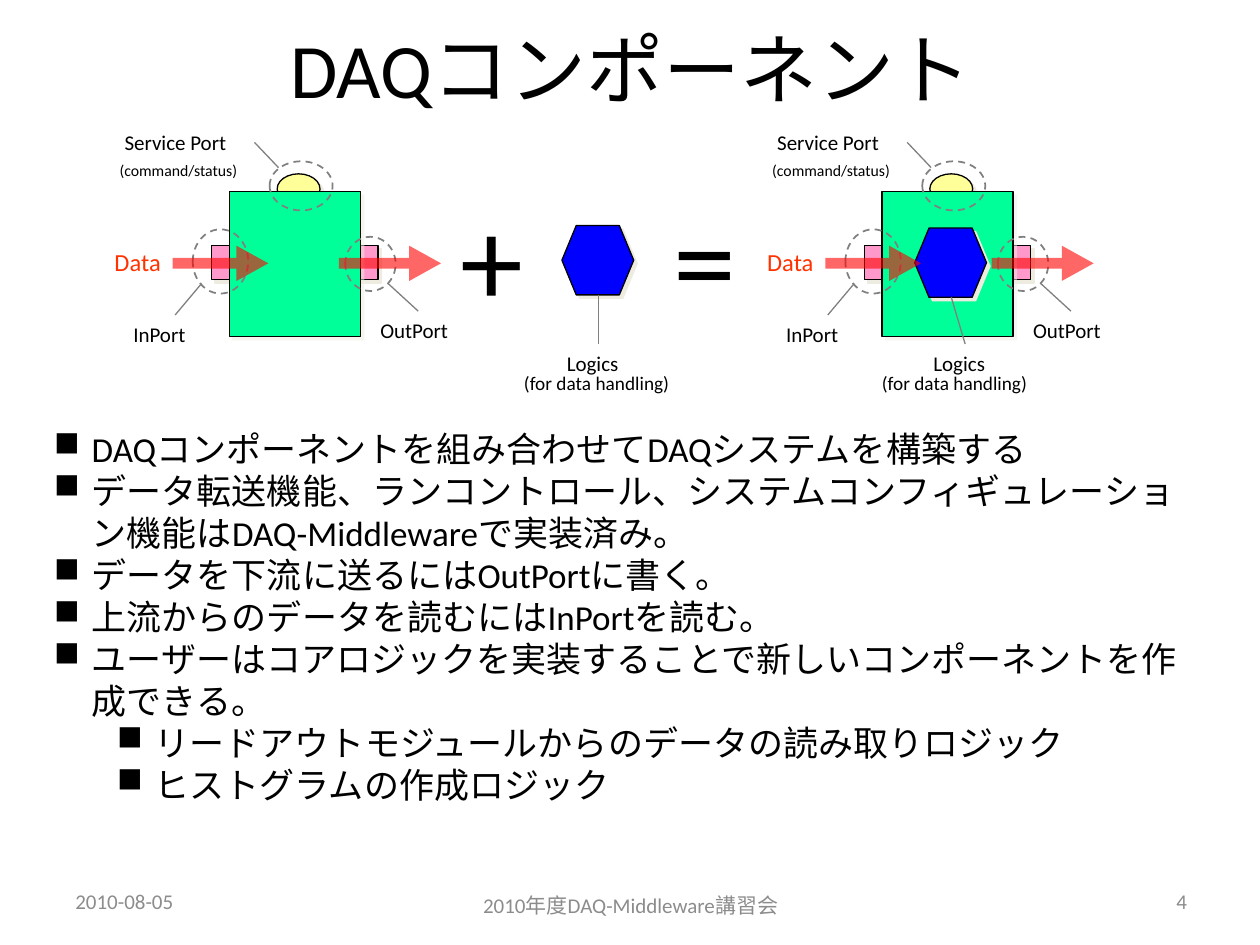
from lxml import etree
from pptx import Presentation
from pptx.dml.color import RGBColor
from pptx.enum.dml import MSO_LINE
from pptx.enum.shapes import MSO_CONNECTOR, MSO_SHAPE as Shape
from pptx.enum.text import MSO_ANCHOR as Anchor, MSO_AUTO_SIZE as AutoSize, PP_ALIGN as Align
from pptx.oxml.ns import qn
from pptx.util import Inches, Pt

FONT = "Calibri"
BLACK, GRAY, FOOTER = "000000", "808080", "8C8C8C"
PINK, YELLOW, GREEN, BLUE = "FF99CC", "FFFF99", "00FF99", "0000FF"
RED, ORANGE, SHADOW = "FF0000", "FF3300", "EEECE1"
BULLETS = [
    (0, "DAQコンポーネントを組み合わせてDAQシステムを構築する"),
    (0, "データ転送機能、ランコントロール、システムコンフィギュレーション機能はDAQ-Middlewareで実装済み。"),
    (0, "データを下流に送るにはOutPortに書く。"),
    (0, "上流からのデータを読むにはInPortを読む。"),
    (0, "ユーザーはコアロジックを実装することで新しいコンポーネントを作成できる。"),
    (1, "リードアウトモジュールからのデータの読み取りロジック"),
    (1, "ヒストグラムの作成ロジック"),
]


def rgb(color):
    return RGBColor.from_string(color)


def add_alpha(sp, percent):
    """Put an alpha value on the first colour found below the shape properties."""
    clr = next(sp._element.spPr.iter(qn("a:srgbClr")))
    etree.SubElement(clr, qn("a:alpha"), val=str(percent * 1000))


def add_shadow(sp, percent):
    effects = sp._element.spPr.find(qn("a:effectLst"))
    shadow = etree.SubElement(effects, qn("a:outerShdw"), dist=str(Pt(2.8)),
                              dir="2700000", algn="ctr", rotWithShape="0")
    clr = etree.SubElement(shadow, qn("a:srgbClr"), val=SHADOW)
    etree.SubElement(clr, qn("a:alpha"), val=str(percent * 1000))


def add_part(s, kind, x, y, w, h, fill=None, line=None, shadow=0):
    sp = s.shapes.add_shape(kind, Inches(x), Inches(y), Inches(w), Inches(h))
    sp.shadow.inherit = False
    if fill:
        sp.fill.solid()
        sp.fill.fore_color.rgb = rgb(fill)
    else:
        sp.fill.background()
    if line:
        sp.line.color.rgb = rgb(line)
        sp.line.width = Pt(0.75)
    else:
        sp.line.fill.background()
    if shadow:
        add_shadow(sp, shadow)
    return sp


def add_ring(s, x, y, w, h):
    sp = add_part(s, Shape.OVAL, x, y, w, h, line=GRAY)
    sp.line.width = Pt(1)
    sp.line.dash_style = MSO_LINE.DASH


def add_arrow(s, x, y, w):
    sp = add_part(s, Shape.RIGHT_ARROW, x, y, w, 0.28, RED)
    sp.adjustments[0], sp.adjustments[1] = 0.308, 0.902
    add_alpha(sp, 60)


def add_leader(s, x1, y1, x2, y2):
    line = s.shapes.add_connector(MSO_CONNECTOR.STRAIGHT, Inches(x1), Inches(y1),
                                  Inches(x2), Inches(y2))
    line.line.color.rgb = rgb(GRAY)
    line.line.width = Pt(0.75)
    etree.SubElement(line._element.spPr, qn("a:effectLst"))


def style(p, size, color):
    for r in p.runs:
        r.font.size = Pt(size)
        r.font.name = FONT
        r.font.color.rgb = rgb(color)


def add_text(s, text, x, y, w, h, size, color=BLACK, align=Align.LEFT,
             anchor=Anchor.MIDDLE):
    tb = s.shapes.add_textbox(Inches(x), Inches(y), Inches(w), Inches(h))
    tf = tb.text_frame
    tf.word_wrap = True
    tf.vertical_anchor = anchor
    tf.text = text
    tf.paragraphs[0].alignment = align
    style(tf.paragraphs[0], size, color)
    return tf


def add_label(s, text, x, y, w, h, size, color=BLACK, wrap=False):
    tf = add_text(s, text, x, y, w, h, size, color, anchor=Anchor.TOP)
    tf.word_wrap = wrap
    tf.auto_size = AutoSize.SHAPE_TO_FIT_TEXT


def add_body(s, x, y, w, h):
    sp = add_part(s, Shape.RECTANGLE, x, y, w, h, "FFFFFF")
    tf = sp.text_frame
    tf.word_wrap = True
    tf.vertical_anchor = Anchor.TOP
    tf.margin_top = Inches(0.73)  # leaves room for the diagram captions
    for i, (level, text) in enumerate(BULLETS):
        p = tf.add_paragraph() if i else tf.paragraphs[0]
        p.text = text
        p.level = level
        p.alignment = Align.LEFT
        style(p, 20, BLACK)
        pPr = p._p.get_or_add_pPr()
        pPr.set("marL", str(Inches(0.4 + 0.5 * level)))
        pPr.set("indent", str(Inches(-0.3)))
        etree.SubElement(pPr, qn("a:buChar"), char="■")


def add_logics(s, x, y, label_x, caption_x, label_y):
    """Hexagon at x, y with a leader down to its two centred labels."""
    add_part(s, Shape.FLOWCHART_PREPARATION, x, y, 0.57, 0.55, BLUE, BLACK, 100)
    add_label(s, "Logics", label_x - 0.35, label_y, 0.7, 0.3, 12, wrap=True)
    add_leader(s, label_x, label_y, x + 0.29, y + 0.55)
    add_label(s, "(for data handling)", caption_x - 0.72, label_y + 0.17, 1.45, 0.29, 11)


def add_component(s, x, y, with_logics=False):
    # Ports and body
    for port_x in (1.95, 0.87):
        add_part(s, Shape.RECTANGLE, x + port_x, y + 0.97, 0.24, 0.27, PINK, BLACK, 100)
    add_part(s, Shape.OVAL, x + 1.39, y + 0.4, 0.34, 0.24, YELLOW, BLACK, 100)
    add_part(s, Shape.RECTANGLE, x + 1.01, y + 0.54, 1.04, 1.15, GREEN, BLACK, 50)

    # InPort
    add_ring(s, x + 0.72, y + 0.84, 0.44, 0.51)
    add_label(s, "InPort", x + 0.15, y + 1.52, 0.86, 0.3, 12, wrap=True)
    add_leader(s, x + 0.58, y + 1.52, x + 0.79, y + 1.27)

    # OutPort
    add_ring(s, x + 1.93, y + 0.9, 0.4, 0.43)
    add_label(s, "OutPort", x + 2.11, y + 1.49, 0.82, 0.3, 12, wrap=True)
    add_leader(s, x + 2.27, y + 1.27, x + 2.51, y + 1.49)

    # Service port
    add_ring(s, x + 1.33, y + 0.3, 0.5, 0.39)
    add_label(s, "Service Port", x + 0.08, y, 1.13, 0.3, 12, wrap=True)
    add_leader(s, x + 1.21, y + 0.15, x + 1.4, y + 0.35)
    add_label(s, "(command/status)", x + 0.04, y + 0.25, 1.21, 0.25, 9)

    if with_logics:
        add_logics(s, x + 1.27, y + 0.83, x + 1.67, x + 1.63, y + 1.75)

    # Data flow
    add_arrow(s, x + 0.56, y + 0.97, 0.76)
    add_label(s, "Data", x, y + 0.93, 0.62, 0.34, 14, ORANGE)
    add_arrow(s, x + 1.88, y + 0.97, 0.81)


def add_equation(s, x, y):
    """Component + logics = component holding the logics."""
    add_component(s, x, y)
    add_logics(s, x + 3.65, y + 0.81, x + 3.94, x + 3.97, y + 1.75)
    add_component(s, x + 5.18, y, with_logics=True)
    for sign, sign_x in (("+", 2.75), ("=", 4.44)):
        add_label(s, sign, x + sign_x, y + 0.4, 0.71, 1.31, 72)


def add_footer(s, x, y):
    add_text(s, "2010-08-05", x, y, 2.33, 0.4, 12, FOOTER)
    add_text(s, "2010年度DAQ-Middleware講習会", x + 2.92, y + 0.03, 3.17, 0.4, 12,
             FOOTER, Align.CENTER)
    add_text(s, "4", x + 6.69, y, 2.33, 0.4, 12, FOOTER, Align.RIGHT)


def main():
    prs = Presentation()
    prs.slide_width, prs.slide_height = Inches(10), Inches(7.5)
    s = prs.slides.add_slide(prs.slide_layouts[6])
    add_text(s, "DAQコンポーネント", 0.51, 0, 9, 1.08, 44, align=Align.CENTER)
    add_body(s, 0.23, 2.66, 9.36, 3.76)
    add_equation(s, 0.81, 0.98)
    add_footer(s, 0.5, 6.95)
    prs.save("out.pptx")


if __name__ == "__main__":
    main()
